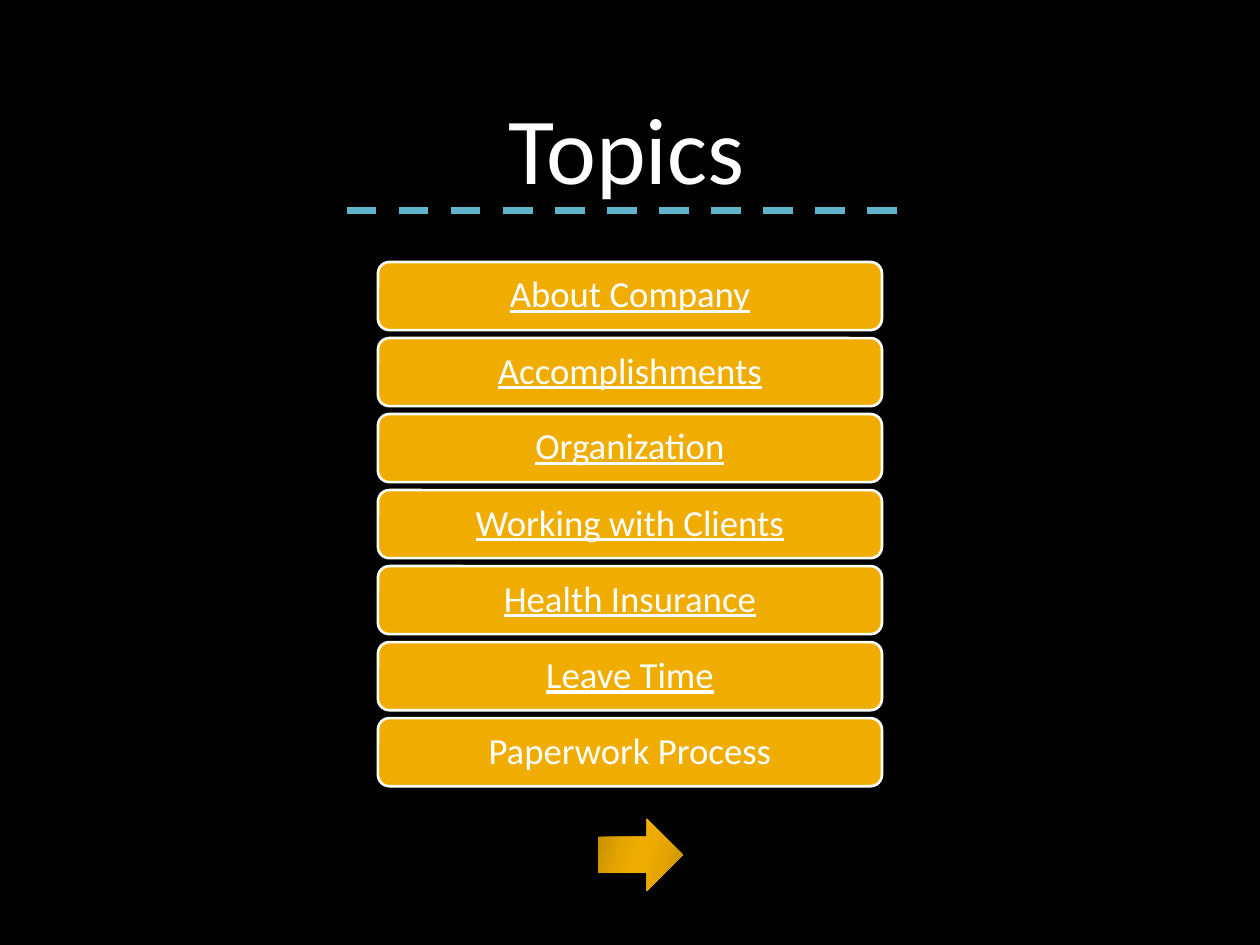
from lxml.etree import SubElement
from pptx import Presentation
from pptx.dml.color import RGBColor
from pptx.enum.dml import MSO_LINE
from pptx.enum.shapes import MSO_CONNECTOR, MSO_SHAPE
from pptx.enum.text import MSO_ANCHOR, PP_ALIGN
from pptx.oxml.ns import qn
from pptx.util import Inches, Pt

BLACK = RGBColor(0x00, 0x00, 0x00)
WHITE = RGBColor(0xFF, 0xFF, 0xFF)
GOLD = RGBColor(0xF0, 0xAD, 0x00)
MID_GOLD = RGBColor(0xE5, 0xA5, 0x00)
DARK_GOLD = RGBColor(0xC4, 0x8E, 0x00)
BLUE = RGBColor(0x60, 0xB5, 0xCC)
FONT = "Calibri"

# Topic and whether it is underlined
TOPICS = [
    ("About Company", True),
    ("Accomplishments", True),
    ("Organization", True),
    ("Working with Clients", True),
    ("Health Insurance", True),
    ("Leave Time", True),
    ("Paperwork Process", False),
]
ARROW_STOPS = [(0, DARK_GOLD), (30, MID_GOLD), (45, GOLD),
               (55, GOLD), (73, MID_GOLD), (100, DARK_GOLD)]


def format_text(tf, size, underline=None):
    tf.word_wrap = True
    tf.vertical_anchor = MSO_ANCHOR.MIDDLE
    p = tf.paragraphs[0]
    p.alignment = PP_ALIGN.CENTER
    font = p.runs[0].font
    font.name, font.size, font.underline = FONT, Pt(size), underline
    font.color.rgb = WHITE
    return p


def add_title(s, left, top, width, height):
    title = s.shapes.title
    title.left, title.top = Inches(left), Inches(top)
    title.width, title.height = Inches(width), Inches(height)
    title.text_frame.text = "Topics"
    format_text(title.text_frame, 54)


def add_rule(s, left, top, width):
    line = s.shapes.add_connector(MSO_CONNECTOR.STRAIGHT, Inches(left), Inches(top),
                                  Inches(left + width), Inches(top))
    line.line.color.rgb = BLUE
    line.line.width = Pt(4.25)
    line.line.dash_style = MSO_LINE.DASH
    SubElement(line._element.spPr, qn("a:effectLst"))


def add_topics(s, left, top, width, height):
    button_h = 0.54
    pitch = (height - button_h) / (len(TOPICS) - 1)
    for i, (topic, underline) in enumerate(TOPICS):
        sp = s.shapes.add_shape(MSO_SHAPE.ROUNDED_RECTANGLE, Inches(left),
                                Inches(top + i * pitch), Inches(width), Inches(button_h))
        sp.shadow.inherit = False
        sp.fill.solid()
        sp.fill.fore_color.rgb = GOLD
        sp.line.color.rgb = WHITE
        sp.line.width = Pt(1.5)
        tf = sp.text_frame
        tf.text = topic
        tf.margin_left = tf.margin_right = Inches(0.09)
        tf.margin_top = tf.margin_bottom = Inches(0.09)
        format_text(tf, 21, underline).line_spacing = 0.9


def add_next_arrow(s, left, top, width, height):
    sp = s.shapes.add_shape(MSO_SHAPE.RIGHT_ARROW, Inches(left), Inches(top),
                            Inches(width), Inches(height))
    sp.shadow.inherit = False
    sp.line.fill.background()
    sp.fill.gradient()
    # Replace the default stops
    grad = sp._element.spPr.find(qn("a:gradFill"))
    stops = grad.find(qn("a:gsLst"))
    for gs in list(stops):
        stops.remove(gs)
    for pos, color in ARROW_STOPS:
        gs = SubElement(stops, qn("a:gs"), pos=str(pos * 1000))
        SubElement(gs, qn("a:srgbClr"), val=str(color))
    grad.find(qn("a:lin")).set("ang", str(16 * 60000))


def main():
    prs = Presentation()
    prs.slide_width, prs.slide_height = Inches(10), Inches(7.5)
    s = prs.slides.add_slide(prs.slide_layouts[5])
    s.background.fill.solid()
    s.background.fill.fore_color.rgb = BLACK
    add_rule(s, 2.75, 1.67, 4.5)
    add_title(s, 0.58, 0.5, 8.79, 1.33)
    add_topics(s, 3, 2.08, 4, 4.16)
    add_next_arrow(s, 4.75, 6.5, 0.67, 0.57)
    prs.save("out.pptx")


if __name__ == "__main__":
    main()
